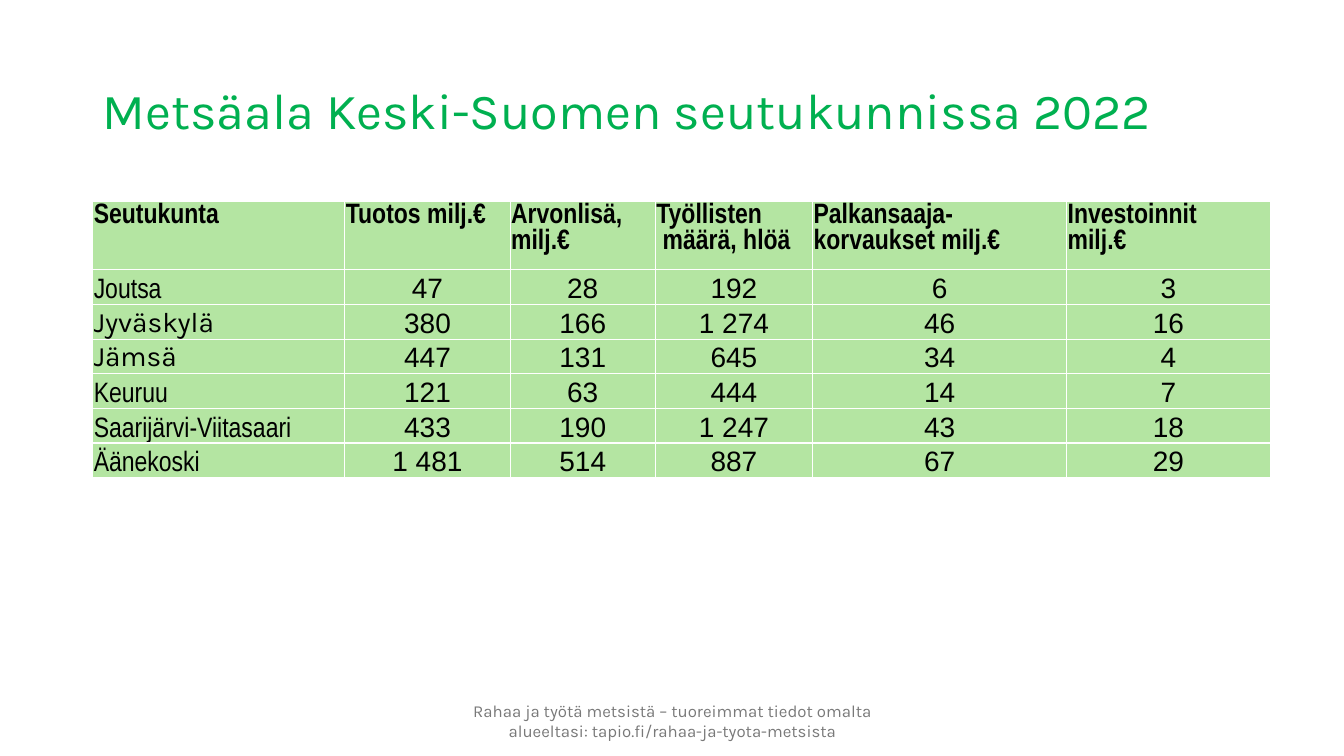
from lxml.etree import SubElement
from pptx import Presentation
from pptx.dml.color import RGBColor
from pptx.enum.text import MSO_ANCHOR as Anchor, PP_ALIGN as Align
from pptx.oxml.ns import qn
from pptx.util import Inches, Pt

# Content
TITLE = "Metsäala Keski-Suomen seutukunnissa 2022"
FOOTER = ("Rahaa ja työtä metsistä – tuoreimmat tiedot omalta alueeltasi: "
          "tapio.fi/rahaa-ja-tyota-metsista")
REGION_ROWS = [
    ("Seutukunta", "Tuotos milj.€", "Arvonlisä, milj.€", "Työllisten\n määrä, hlöä",
     "Palkansaaja-korvaukset milj.€", "Investoinnit\nmilj.€"),
    ("Joutsa", "47", "28", "192", "6", "3"),
    ("Jyväskylä", "380", "166", "1 274", "46", "16"),
    ("Jämsä", "447", "131", "645", "34", "4"),
    ("Keuruu", "121", "63", "444", "14", "7"),
    ("Saarijärvi-Viitasaari", "433", "190", "1 247", "43", "18"),
    ("Äänekoski", "1 481", "514", "887", "67", "29"),
]
KARLA_REGIONS = {"Jyväskylä", "Jämsä"}
COLUMN_WIDTHS = [2.5, 1.64, 1.44, 1.56, 2.52, 2.02]
HEADER_HEIGHT, ROW_HEIGHT = 0.57, 0.2
COLORS = {"title": "00B050", "footer": "797979", "text": "000000",
          "cell": "B4E5A2", "border": "FFFFFF"}


def place(shape, left, top, width, height):
    shape.left, shape.top = Inches(left), Inches(top)
    shape.width, shape.height = Inches(width), Inches(height)


def write(frame, text, font, size, color, align=Align.LEFT, bold=False):
    for index, line in enumerate(text.split("\n")):
        paragraph = frame.add_paragraph() if index else frame.paragraphs[0]
        paragraph.alignment = align
        run = paragraph.add_run()
        run.text = line
        run.font.name, run.font.size, run.font.bold = font, Pt(size), bold
        run.font.color.rgb = RGBColor.from_string(COLORS[color])


def add_borders(cell):
    properties = cell._tc.get_or_add_tcPr()
    for side in ("a:lnL", "a:lnR", "a:lnT", "a:lnB"):
        line = SubElement(properties, qn(side), w=str(Pt(1)))
        fill = SubElement(line, qn("a:solidFill"))
        SubElement(fill, qn("a:srgbClr"), val=COLORS["border"])


presentation = Presentation()
presentation.slide_width, presentation.slide_height = Inches(13.33), Inches(7.5)
slide = presentation.slides.add_slide(presentation.slide_layouts[5])

# Title
title = slide.shapes.title
place(title, 0.92, 0.4, 11.5, 1.45)
title.text_frame.vertical_anchor = Anchor.MIDDLE
write(title.text_frame, TITLE, "Karla", 36, "title")
title.text_frame.paragraphs[0].line_spacing = 0.9

# Footer
footer = slide.shapes.add_textbox(Inches(4.26), Inches(6.95), Inches(4.82), Inches(0.4))
footer.text_frame.word_wrap = True
footer.text_frame.vertical_anchor = Anchor.MIDDLE
write(footer.text_frame, FOOTER, "Karla", 12, "footer", Align.CENTER)

# Table of regions
row_heights = [HEADER_HEIGHT] + [ROW_HEIGHT] * (len(REGION_ROWS) - 1)
regions = slide.shapes.add_table(
    len(REGION_ROWS), len(COLUMN_WIDTHS), Inches(0.92), Inches(2),
    Inches(sum(COLUMN_WIDTHS)), Inches(sum(row_heights))).table
regions.horz_banding = False
for column, width in zip(regions.columns, COLUMN_WIDTHS):
    column.width = Inches(width)
for row, height in zip(regions.rows, row_heights):
    row.height = Inches(height)

for row_index, values in enumerate(REGION_ROWS):
    for column_index, value in enumerate(values):
        cell = regions.cell(row_index, column_index)
        is_header = row_index == 0
        is_number = not is_header and column_index > 0
        inset = Inches(0 if is_number else 0.01)
        cell.margin_left = cell.margin_right = cell.margin_top = inset
        cell.margin_bottom = 0
        cell.vertical_anchor = Anchor.TOP if is_header else Anchor.BOTTOM
        add_borders(cell)
        cell.fill.solid()
        cell.fill.fore_color.rgb = RGBColor.from_string(COLORS["cell"])
        if is_number:
            font = "Arial"
        else:
            font = "Karla" if value in KARLA_REGIONS else "Arial Narrow"
        write(cell.text_frame, value, font, 20, "text",
              Align.CENTER if is_number else Align.LEFT, is_header)

presentation.save("out.pptx")
